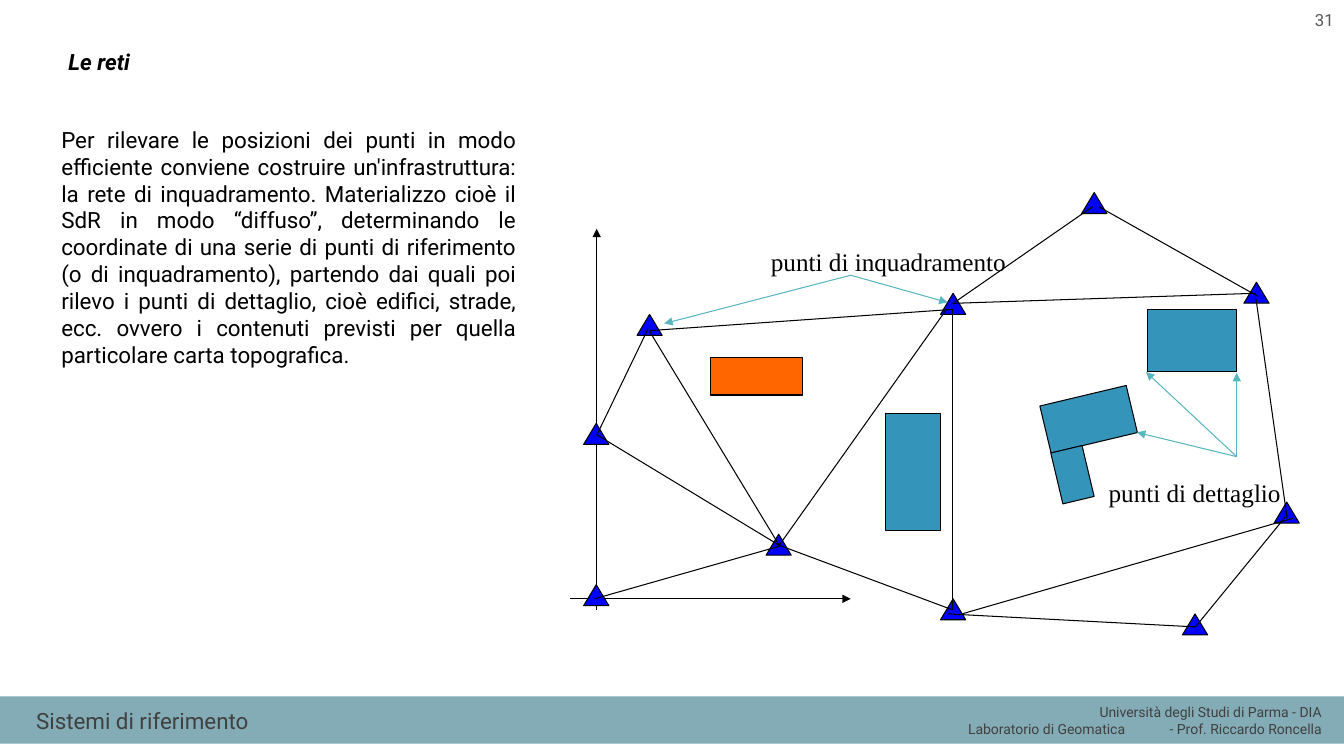
from lxml import etree
from pptx import Presentation
from pptx.dml.color import RGBColor
from pptx.enum.shapes import MSO_CONNECTOR, MSO_SHAPE
from pptx.enum.text import MSO_ANCHOR, PP_ALIGN
from pptx.oxml.ns import qn
from pptx.util import Pt

RECT = MSO_SHAPE.RECTANGLE
TRIANGLE = MSO_SHAPE.ISOSCELES_TRIANGLE
STRAIGHT = MSO_CONNECTOR.STRAIGHT
TOP, MIDDLE = MSO_ANCHOR.TOP, MSO_ANCHOR.MIDDLE
LEFT, RIGHT, JUSTIFY = PP_ALIGN.LEFT, PP_ALIGN.RIGHT, PP_ALIGN.JUSTIFY

BLACK = RGBColor(0x00, 0x00, 0x00)
DARK = RGBColor(0x40, 0x40, 0x40)
GREY = RGBColor(0x59, 0x59, 0x59)
BAND = RGBColor(0x84, 0xAC, 0xB6)
BLUE = RGBColor(0x00, 0x00, 0xFF)
TEAL = RGBColor(0x34, 0x94, 0xBA)
AQUA = RGBColor(0x58, 0xB6, 0xC0)
ORANGE = RGBColor(0xFF, 0x66, 0x00)

BODY = (
    "Per rilevare le posizioni dei punti in modo efficiente conviene costruire "
    "un'infrastruttura: la rete di inquadramento. Materializzo cioè il SdR in modo "
    "“diffuso”, determinando le coordinate di una serie di punti di riferimento "
    "(o di inquadramento), partendo dai quali poi rilevo i punti di dettaglio, cioè "
    "edifici, strade, ecc. ovvero i contenuti previsti per quella particolare carta "
    "topografica."
)

AXES = [
    ((426.2, 435.6), (426.2, 163.4)),
    ((407.5, 427.7), (607.7, 427.7)),
]

BUILDINGS = [
    ((745.9, 282.2, 63.4, 34.6), TEAL, -13.4),
    ((754.6, 320.4, 23, 37.4), TEAL, -13.4),
    ((507.6, 255.6, 65.5, 26.6), ORANGE, 0),
    ((632.2, 295.2, 39.6, 83.5), TEAL, 0),
    ((819.4, 221, 64.1, 44.6), TEAL, 0),
]

STATION_SIZE = (18, 15)
STATIONS = [
    (455, 224.6), (547.2, 381.6), (910.1, 358.6), (671.8, 209.5), (671.8, 427.7),
    (888.5, 201.6), (772.6, 137.5), (844.6, 438.5), (416.9, 417.6), (416.9, 302.4),
]

NET = [
    ((463.7, 236.2), (556.6, 389.5)),
    ((556.6, 389.5), (680.4, 435.6)),
    ((556.6, 389.5), (676.1, 221)),
    ((680.4, 216.7), (897.1, 209.5)),
    ((684.7, 439.2), (923.8, 370.1)),
    ((919.4, 370.1), (897.1, 213.1)),
    ((463.7, 236.2), (680.4, 221)),
    ((680.4, 221), (680.4, 435.6)),
    ((681.8, 216), (780.5, 147.6)),
    ((898.6, 211.7), (784.8, 147.6)),
    ((853.9, 447.8), (918, 369.4)),
    ((676.8, 438.5), (853.9, 447.8)),
    ((463, 234.7), (426.2, 311)),
    ((556.6, 390.2), (424.8, 427.7)),
    ((556.6, 389.5), (427, 311)),
]

POINTERS = [
    ((607.7, 196.6), [(474.5, 231.1), (676.8, 216)]),
    ((883.4, 326.2), [(818.6, 265.7), (883.4, 266.4), (812.2, 308.9)]),
]


class Painter:
    font = "Roboto"
    label_font = "Times New Roman"
    line_width = 0.75

    def __init__(self, slide):
        self.s = slide

    def shape(self, kind, box, fill, outline=True, rotation=0):
        sp = self.s.shapes.add_shape(kind, *map(Pt, box))
        sp.shadow.inherit = False
        sp.rotation = rotation
        sp.fill.solid()
        sp.fill.fore_color.rgb = fill
        if outline:
            sp.line.color.rgb = BLACK
            sp.line.width = Pt(self.line_width)
        else:
            sp.line.fill.background()

    def line(self, start, end, color=BLACK, arrow=False):
        cx = self.s.shapes.add_connector(STRAIGHT, *map(Pt, start + end))
        cx.line.color.rgb = color
        cx.line.width = Pt(self.line_width)
        if arrow:
            etree.SubElement(cx.line._get_or_add_ln(), qn("a:tailEnd"), type="triangle")
        etree.SubElement(cx._element.spPr, qn("a:effectLst"))

    def text(self, box, lines, size, color=BLACK, align=LEFT, anchor=TOP,
             wrap=True, spacing=None, **style):
        tf = self.s.shapes.add_textbox(*map(Pt, box)).text_frame
        tf.word_wrap = wrap
        tf.vertical_anchor = anchor
        fmt = {"name": self.font, "size": Pt(size), **style}
        for i, line in enumerate(lines):
            p = tf.add_paragraph() if i else tf.paragraphs[0]
            p.alignment = align
            p.line_spacing = spacing
            r = p.add_run()
            r.text = line
            for key, value in fmt.items():
                setattr(r.font, key, value)
            r.font.color.rgb = color

    def label(self, box, line, wrap=True):
        self.text(box, [line], 18, wrap=wrap, name=self.label_font)


def main():
    prs = Presentation()
    prs.slide_width, prs.slide_height = Pt(960), Pt(540)
    d = Painter(prs.slides.add_slide(prs.slide_layouts[6]))

    d.shape(RECT, (0, 497.5, 960, 33.8), BAND, outline=False)
    d.text((652.3, 499, 298.8, 31.7),
           ["Università degli Studi di Parma - DIA",
            "Laboratorio di Geomatica\t- Prof. Riccardo Roncella"],
           10, DARK, RIGHT)
    d.text((18.7, 500.4, 523.4, 28.8), ["Sistemi di riferimento"], 16, DARK, anchor=MIDDLE)
    d.text((41.8, 33.1, 425.5, 87.1), ["Le reti"], 16, spacing=0.9, bold=True, italic=True)

    for start, end in AXES:
        d.line(start, end, arrow=True)
    for box, fill, rotation in BUILDINGS:
        d.shape(RECT, box, fill, rotation=rotation)
    for corner in STATIONS:
        d.shape(TRIANGLE, corner + STATION_SIZE, BLUE)
    for start, end in NET:
        d.line(start, end)
    for start, ends in POINTERS:
        for end in ends:
            d.line(start, end, AQUA, arrow=True)

    d.label((543.6, 172.1, 184.3, 28.8), "punti di inquadramento", wrap=False)
    d.label((784.8, 337.7, 144.7, 28.8), "punti di dettaglio")
    d.text((36.7, 86.4, 339.1, 181.4), [BODY], 16, align=JUSTIFY)
    d.text((907.2, 0, 52.6, 28.8), ["31"], 12, GREY, RIGHT, MIDDLE)

    prs.save("out.pptx")


if __name__ == "__main__":
    main()
